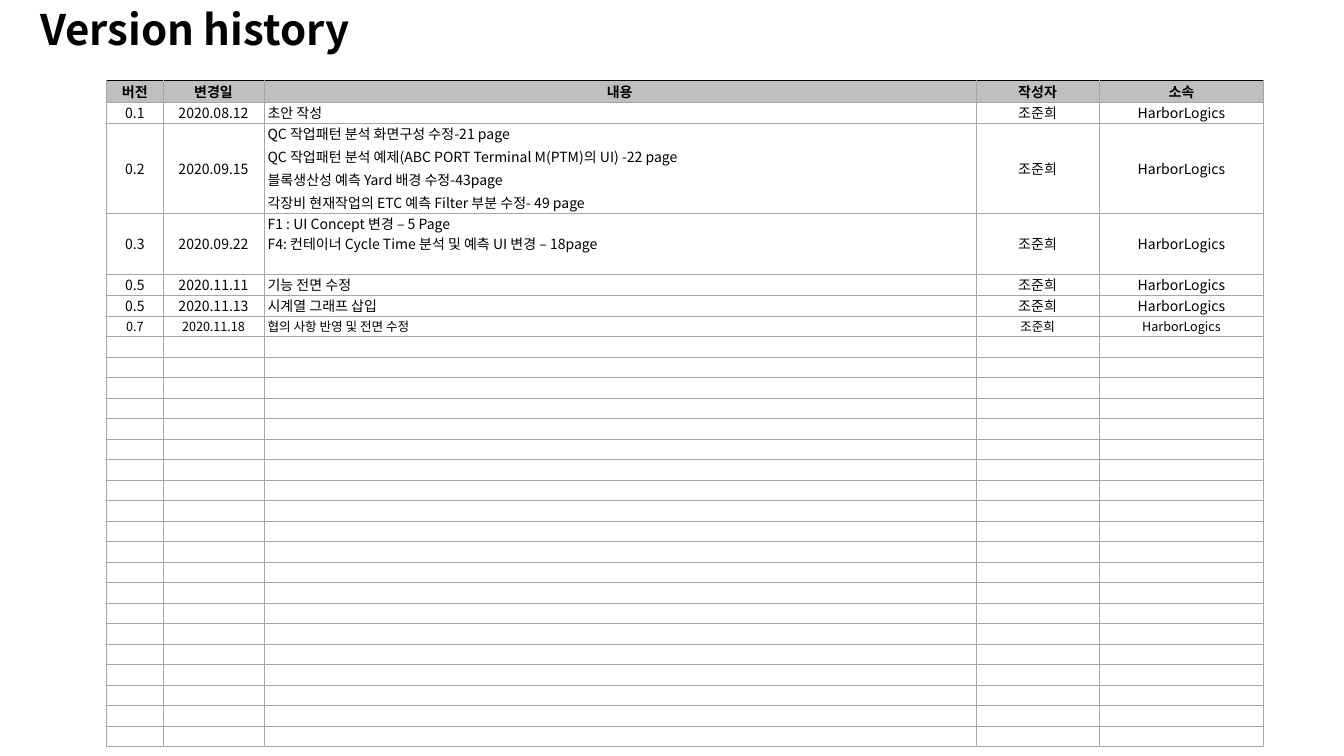
from lxml import etree
from pptx import Presentation
from pptx.dml.color import RGBColor
from pptx.enum import text as t
from pptx.oxml import ns
from pptx.util import Pt

HUES = {"ink": "000000", "head": "BFBFBF", "cell": "FFFFFF", "line": "A6A6A6"}
FACE = "Noto Sans CJK KR"
TITLE = "Version history"
HEADS = ("버전", "변경일", "내용", "작성자", "소속")
NAME, FIRM = "조준희", "HarborLogics"
LOG = [
    ("0.1", "2020.08.12", ["초안 작성"]),
    ("0.2", "2020.09.15", [
        "QC 작업패턴 분석 화면구성 수정-21 page",
        "QC 작업패턴 분석 예제(ABC PORT Terminal M(PTM)의 UI) -22 page",
        "블록생산성 예측 Yard 배경 수정-43page",
        "각장비 현재작업의 ETC 예측 Filter 부분 수정- 49 page"]),
    ("0.3", "2020.09.22", [
        "F1 : UI Concept 변경 – 5 Page",
        "F4: 컨테이너 Cycle Time 분석 및 예측 UI 변경 – 18page"]),
    ("0.5", "2020.11.11", ["기능 전면 수정"]),
    ("0.5", "2020.11.13", ["시계열 그래프 삽입"]),
    ("0.7", "2020.11.18", ["협의 사항 반영 및 전면 수정"]),
]
WIDTHS = (81.4, 143.3, 1017.4, 176.4, 234.7)
SPARE = 20
HEIGHTS = [31, 30, 127.5, 87, 30, 30] + [29.3] * (SPARE + 1)
NOTE, TALL = 2, 3


def write(frame, lines, size=20, bold=False, align=t.PP_ALIGN.CENTER, gap=0):
    """Fill a text frame with one formatted paragraph per line."""
    for i, line in enumerate(lines):
        para = frame.add_paragraph() if i else frame.paragraphs[0]
        para.alignment = align
        para.space_before = Pt(gap if i else 0)
        run = para.add_run()
        run.text = line
        font = run.font
        font.size, font.bold, font.name = Pt(size), bold, FACE
        font.color.rgb = RGBColor.from_string(HUES["ink"])
        east = etree.SubElement(font._element, ns.qn("a:ea"))
        east.set("typeface", FACE)


def edge(cell, head):
    """Draw the four borders of a cell."""
    props = cell._tc.get_or_add_tcPr()
    for i, side in enumerate(("lnL", "lnR", "lnT", "lnB")):
        dark = head and side == "lnT"
        line = etree.Element(ns.qn("a:" + side), w=str(Pt(1 if dark else 0.5)))
        fill = etree.SubElement(line, ns.qn("a:solidFill"))
        hue = HUES["ink" if dark else "line"]
        etree.SubElement(fill, ns.qn("a:srgbClr"), val=hue)
        props.insert(i, line)


def main():
    """Build the version history slide."""
    deck = Presentation()
    deck.slide_width, deck.slide_height = Pt(1920), Pt(1080)
    slide = deck.slides.add_slide(deck.slide_layouts[5])

    title = slide.shapes.title
    title.left, title.top, title.width, title.height = map(Pt, (50, 1.5, 1240, 80))
    title.text_frame.auto_size = t.MSO_AUTO_SIZE.NONE
    title.text_frame.vertical_anchor = t.MSO_ANCHOR.MIDDLE
    write(title.text_frame, [TITLE], size=60, bold=True, align=t.PP_ALIGN.LEFT)

    rows = [[[head] for head in HEADS]]
    rows += [[[ver], [day], notes, [NAME], [FIRM]] for ver, day, notes in LOG]
    last = len(LOG)
    rows += [[[]] * len(HEADS)] * SPARE

    grid = slide.shapes.add_table(
        len(rows), len(HEADS), Pt(152), Pt(115),
        Pt(sum(WIDTHS)), Pt(sum(HEIGHTS))).table
    for col, width in zip(grid.columns, WIDTHS):
        col.width = Pt(width)
    for r, row in enumerate(rows):
        grid.rows[r].height = Pt(HEIGHTS[r])
        for c, lines in enumerate(row):
            cell, head = grid.cell(r, c), r == 0
            cell.fill.solid()
            hue = HUES["head" if head else "cell"]
            cell.fill.fore_color.rgb = RGBColor.from_string(hue)
            edge(cell, head)
            cell.margin_left = cell.margin_right = Pt(5.6)
            cell.margin_top = cell.margin_bottom = 0
            note = c == NOTE and not head
            top = note and r == TALL
            cell.vertical_anchor = t.MSO_ANCHOR.TOP if top else t.MSO_ANCHOR.MIDDLE
            write(cell.text_frame, lines, size=18 if r == last else 20, bold=head,
                  align=t.PP_ALIGN.LEFT if note else t.PP_ALIGN.CENTER,
                  gap=0 if top else 4)
    deck.save("out.pptx")


if __name__ == "__main__":
    main()
